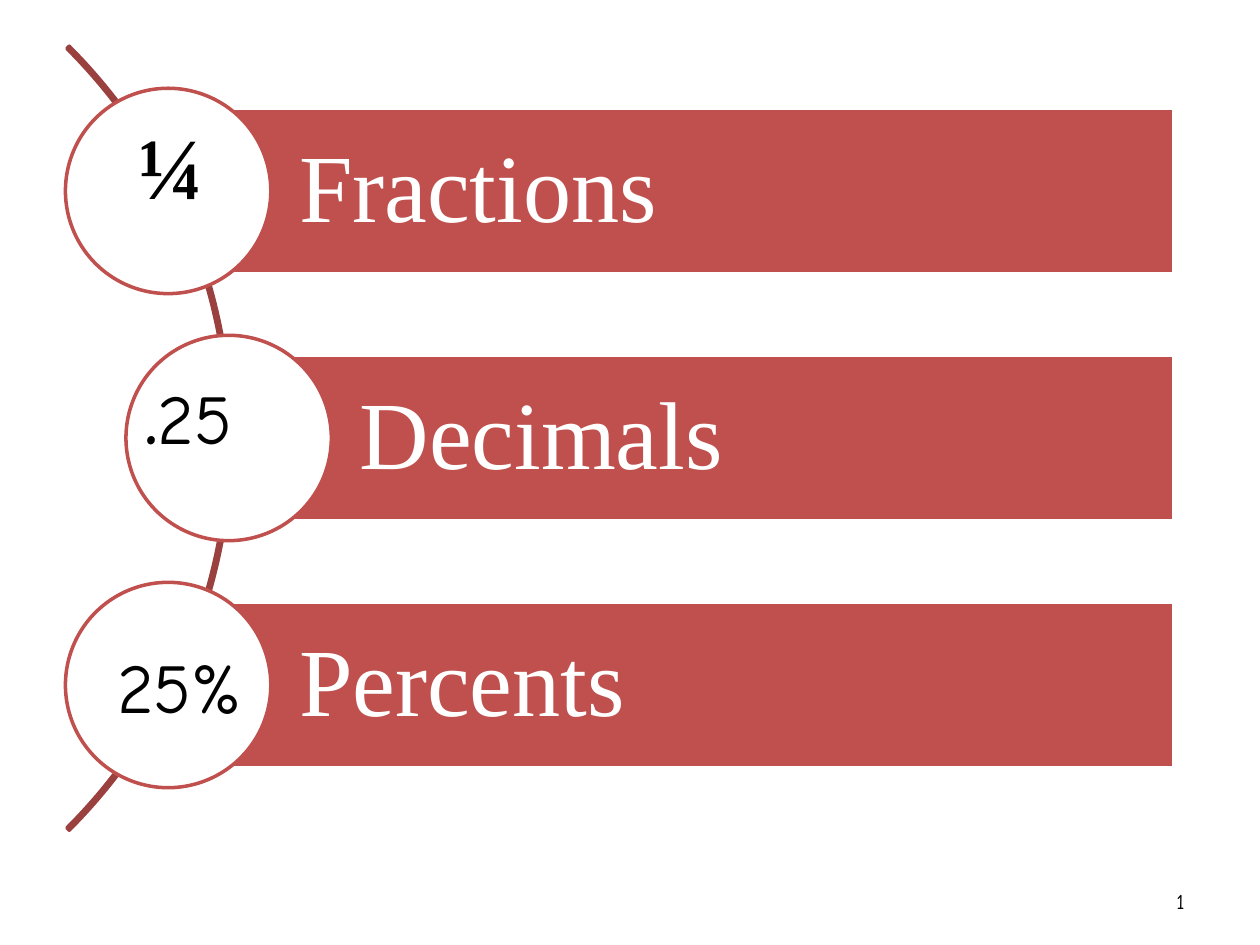
from pptx import Presentation
from pptx.dml.color import RGBColor
from pptx.enum.shapes import MSO_SHAPE
from pptx.enum.text import MSO_ANCHOR, PP_ALIGN
from pptx.util import Cm, Pt

THEME = {
    "red": RGBColor(0xC0, 0x50, 0x4D),
    "dark_red": RGBColor(0x9A, 0x40, 0x3E),
    "white": RGBColor(0xFF, 0xFF, 0xFF),
    "black": RGBColor(0, 0, 0),
    "serif": "Times New Roman",
    "hand": "Comic Neue",
    "label": Pt(55),
    "fraction": Pt(50),
    "value": Pt(40),
    "number": Pt(12),
    "line": Pt(2),
}


def add_outline_shape(kind, left, top, width, height, fill, line):
    shape = page.shapes.add_shape(kind, Cm(left), Cm(top), Cm(width), Cm(height))
    shape.shadow.inherit = False
    if fill:
        shape.fill.solid()
        shape.fill.fore_color.rgb = THEME[fill]
    else:
        shape.fill.background()
    shape.line.color.rgb = THEME[line]
    shape.line.width = THEME["line"]
    return shape


def write(box, spans, font, size, color, **frame_format):
    frame = box.text_frame
    for name, value in {"word_wrap": True, **frame_format}.items():
        setattr(frame, name, value)
    para = frame.paragraphs[0]
    for text, bold in spans:
        span = para.add_run()
        span.text = text
        span.font.color.rgb = THEME[color]
        for name, value in {"name": THEME[font], "size": THEME[size], "bold": bold}.items():
            setattr(span.font, name, value)
    return para


deck = Presentation()
deck.slide_width, deck.slide_height = Cm(25.4), Cm(19.05)
page = deck.slides.add_slide(deck.slide_layouts[6])

# Slide number
number_box = page.shapes.add_textbox(Cm(18.21), Cm(17.65), Cm(5.92), Cm(1.02))
number = write(number_box, [("1", False)], "hand", "number", "black",
               vertical_anchor=MSO_ANCHOR.MIDDLE)
number.alignment = PP_ALIGN.RIGHT

# Arc behind the three rows
arc = add_outline_shape(MSO_SHAPE.BLOCK_ARC, -17.68, -2.34, 22.35, 22.35, None, "dark_red")
for index, value in enumerate((189, 27, 0.003)):
    arc.adjustments[index] = value

# Rows: a bar that starts at the centre of its circle
FIRST_TOP, ROW_STEP = 1.78, 4.98
DIAMETER, BAR_HEIGHT, BAR_RIGHT = 4.14, 3.33, 23.66
rows = [("Fractions", 1.32), ("Decimals", 2.54), ("Percents", 1.32)]
for index, (label, left) in enumerate(rows):
    top = FIRST_TOP + index * ROW_STEP
    centre = left + DIAMETER / 2
    bar = add_outline_shape(MSO_SHAPE.RECTANGLE, centre, top + (DIAMETER - BAR_HEIGHT) / 2,
                            BAR_RIGHT - centre, BAR_HEIGHT, "red", "white")
    para = write(bar, [(label, False)], "serif", "label", "white",
                 vertical_anchor=MSO_ANCHOR.MIDDLE, margin_left=Cm(2.64),
                 margin_right=Cm(0.38), margin_top=Cm(0.38), margin_bottom=Cm(0.38))
    para.alignment = PP_ALIGN.LEFT
    para.line_spacing = 0.9
    add_outline_shape(MSO_SHAPE.OVAL, left, top, DIAMETER, DIAMETER, "white", "red")

# Values on the circles
values = [
    ([("¼", True)], 2.55, 2.13, "serif", "fraction"),
    ([(".", True), ("25", False)], 2.68, 7.42, "hand", "value"),
    ([("25%", False)], 2.11, 12.84, "hand", "value"),
]
for spans, left, top, font, size in values:
    value_box = page.shapes.add_textbox(Cm(left), Cm(top), Cm(3.9), Cm(2.1))
    write(value_box, spans, font, size, "black")

deck.save("out.pptx")
